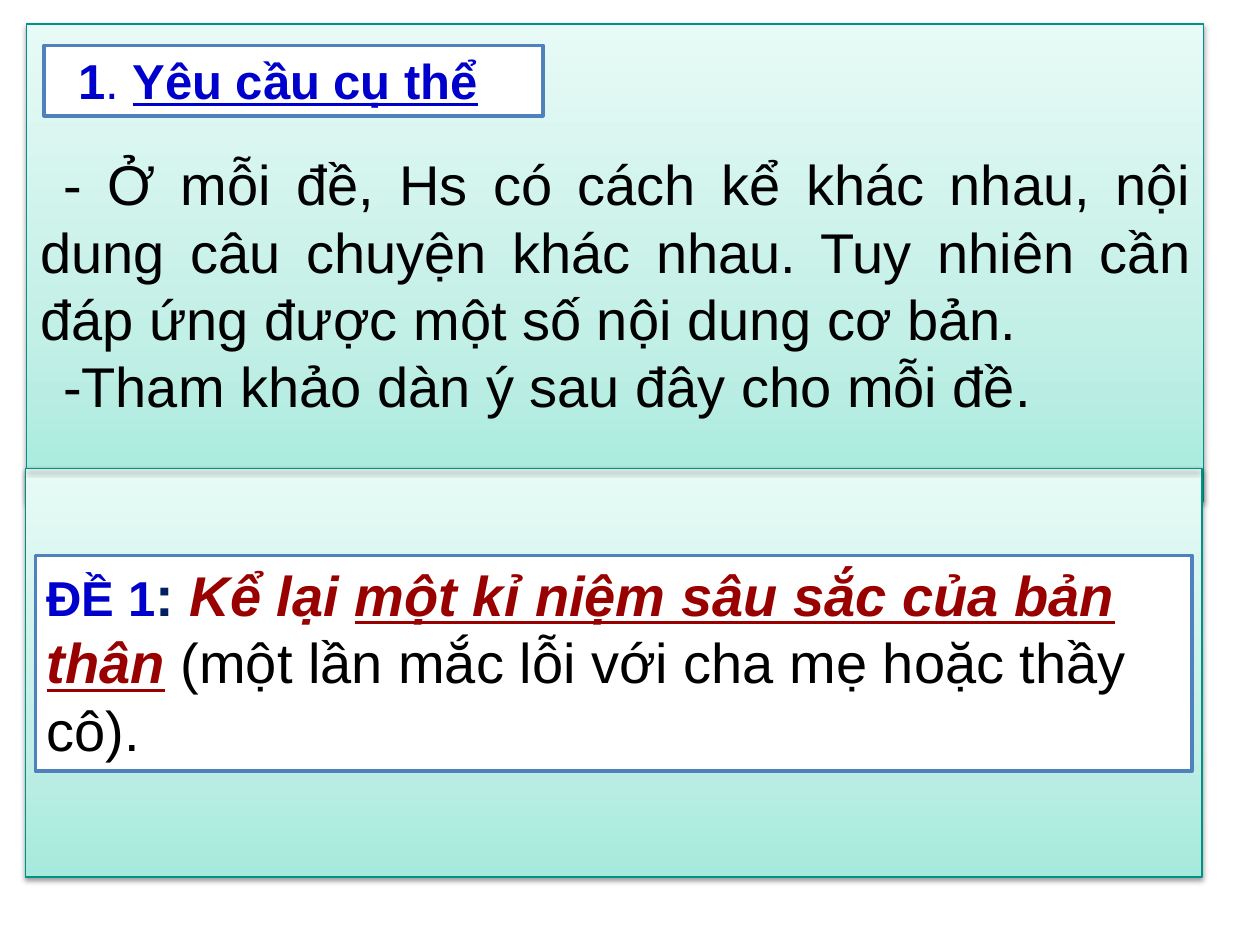
from lxml.etree import SubElement
from pptx import Presentation
from pptx.dml.color import RGBColor
from pptx.enum.shapes import MSO_CONNECTOR as Connector, MSO_SHAPE as Shape
from pptx.enum.text import MSO_ANCHOR as Anchor, MSO_AUTO_SIZE as AutoSize, PP_ALIGN as Align
from pptx.oxml import parse_xml
from pptx.oxml.ns import nsdecls, qn
from pptx.util import Inches, Pt

COLORS = {
    "mint": "A6EADD", "pale_mint": "C2EFE6", "lightest_mint": "E7FAF6",
    "teal": "009385", "frame": "4F81BD", "white": "FFFFFF", "black": "000000",
    "blue": "0000CC", "navy": "002060", "red": "990000",
}
PANEL_STOPS = [(0, "mint"), (35, "pale_mint"), (100, "lightest_mint")]


class LessonSlide:
    font = "Arial"

    def __init__(self, deck):
        self.slide = deck.slides.add_slide(deck.slide_layouts[5])
        self.panels = self.slide.shapes.add_group_shape().shapes

    def color(self, name):
        return RGBColor.from_string(COLORS[name])

    def outline(self, item, color, width):
        item.line.color.rgb = self.color(color)
        item.line.width = Pt(width)

    def shadow(self, item):
        effects = item._element.spPr.find(qn("a:effectLst"))
        if effects is None:
            effects = SubElement(item._element.spPr, qn("a:effectLst"))
        effects.append(parse_xml(
            f'<a:outerShdw {nsdecls("a")} blurRad="{Pt(3.1)}" dist="{Pt(1.6)}" dir="5400000" '
            f'rotWithShape="0"><a:srgbClr val="{COLORS["black"]}"><a:alpha val="38000"/>'
            '</a:srgbClr></a:outerShdw>'))

    def panel(self, left, top, width, height):
        panel = self.panels.add_shape(
            Shape.RECTANGLE, Inches(left), Inches(top), Inches(width), Inches(height))
        stops = "".join(
            f'<a:gs pos="{place * 1000}"><a:srgbClr val="{COLORS[name]}"/></a:gs>'
            for place, name in PANEL_STOPS)
        panel._element.spPr.append(parse_xml(
            f'<a:gradFill {nsdecls("a")} rotWithShape="1"><a:gsLst>{stops}</a:gsLst>'
            '<a:lin ang="16200000" scaled="0"/></a:gradFill>'))
        self.outline(panel, "teal", 0.75)
        panel.shadow.inherit = False
        self.shadow(panel)

    def divider(self, left, right, top):
        divider = self.panels.add_connector(
            Connector.STRAIGHT, Inches(left), Inches(top), Inches(right), Inches(top))
        self.outline(divider, "teal", 0.75)
        self.shadow(divider)

    def fill_text(self, box, paragraphs, align=Align.LEFT, indent=0.0):
        frame = box.text_frame
        frame.word_wrap = True
        frame.auto_size = AutoSize.NONE
        frame.vertical_anchor = Anchor.TOP
        frame.margin_left = frame.margin_right = Inches(0.09)
        frame.margin_top = frame.margin_bottom = Inches(0.04)
        for number, pieces in enumerate(paragraphs):
            paragraph = frame.add_paragraph() if number else frame.paragraphs[0]
            paragraph.alignment = align
            paragraph._p.get_or_add_pPr().set("indent", str(Inches(indent)))
            for text, size, color, marks in pieces:
                run = paragraph.add_run()
                run.text = text
                run.font.name = self.font
                run.font.size = Pt(size)
                run.font.color.rgb = self.color(color)
                run.font.bold = "b" in marks
                run.font.italic = "i" in marks
                run.font.underline = "u" in marks

    def frame(self, box):
        box.fill.solid()
        box.fill.fore_color.rgb = self.color("white")
        self.outline(box, "frame", 2)

    def title(self, left, top, width, height, pieces):
        title = self.slide.shapes.title
        title.left, title.top = Inches(left), Inches(top)
        title.width, title.height = Inches(width), Inches(height)
        self.slide.shapes._spTree.append(title._element)
        self.frame(title)
        self.fill_text(title, [pieces], indent=0.18)

    def body(self, left, top, width, height, paragraphs):
        body = self.slide.shapes.add_textbox(
            Inches(left), Inches(top), Inches(width), Inches(height))
        self.fill_text(body, paragraphs, Align.JUSTIFY, 0.18)

    def framed_text(self, left, top, width, height, pieces):
        box = self.slide.shapes.add_shape(
            Shape.RECTANGLE, Inches(left), Inches(top), Inches(width), Inches(height))
        self.frame(box)
        box.shadow.inherit = False
        self.fill_text(box, [pieces])


def main():
    deck = Presentation()
    deck.slide_width, deck.slide_height = Inches(10), Inches(7.5)
    lesson = LessonSlide(deck)

    lesson.panel(0.21, 0.19, 9.34, 3.79)
    lesson.panel(0.2, 3.72, 9.34, 3.24)
    lesson.divider(0.21, 9.52, 3.72)

    requirements = [
        "- Ở mỗi đề, Hs có cách kể khác nhau, nội dung câu chuyện khác nhau. "
        "Tuy nhiên cần đáp ứng được một số nội dung cơ bản.",
        "-Tham khảo dàn ý sau đây cho mỗi đề.",
    ]
    lesson.body(0.23, 1.15, 9.32, 2.4, [[(text, 32, "black", "")] for text in requirements])

    lesson.title(0.35, 0.36, 3.96, 0.56, [
        ("1", 28, "blue", "b"),
        (". ", 28, "blue", ""),
        ("Yêu cầu cụ thể", 28, "blue", "bu"),
    ])
    lesson.framed_text(0.28, 4.41, 9.18, 1.71, [
        ("ĐỀ 1", 28, "blue", "b"),
        (": ", 32, "navy", "b"),
        ("Kể lại ", 32, "red", "bi"),
        ("một kỉ niệm sâu sắc của bản thân", 32, "red", "biu"),
        (" ", 32, "red", "bi"),
        ("(một lần mắc lỗi với cha mẹ hoặc thầy cô).", 32, "black", ""),
    ])
    deck.save("out.pptx")


if __name__ == "__main__":
    main()
